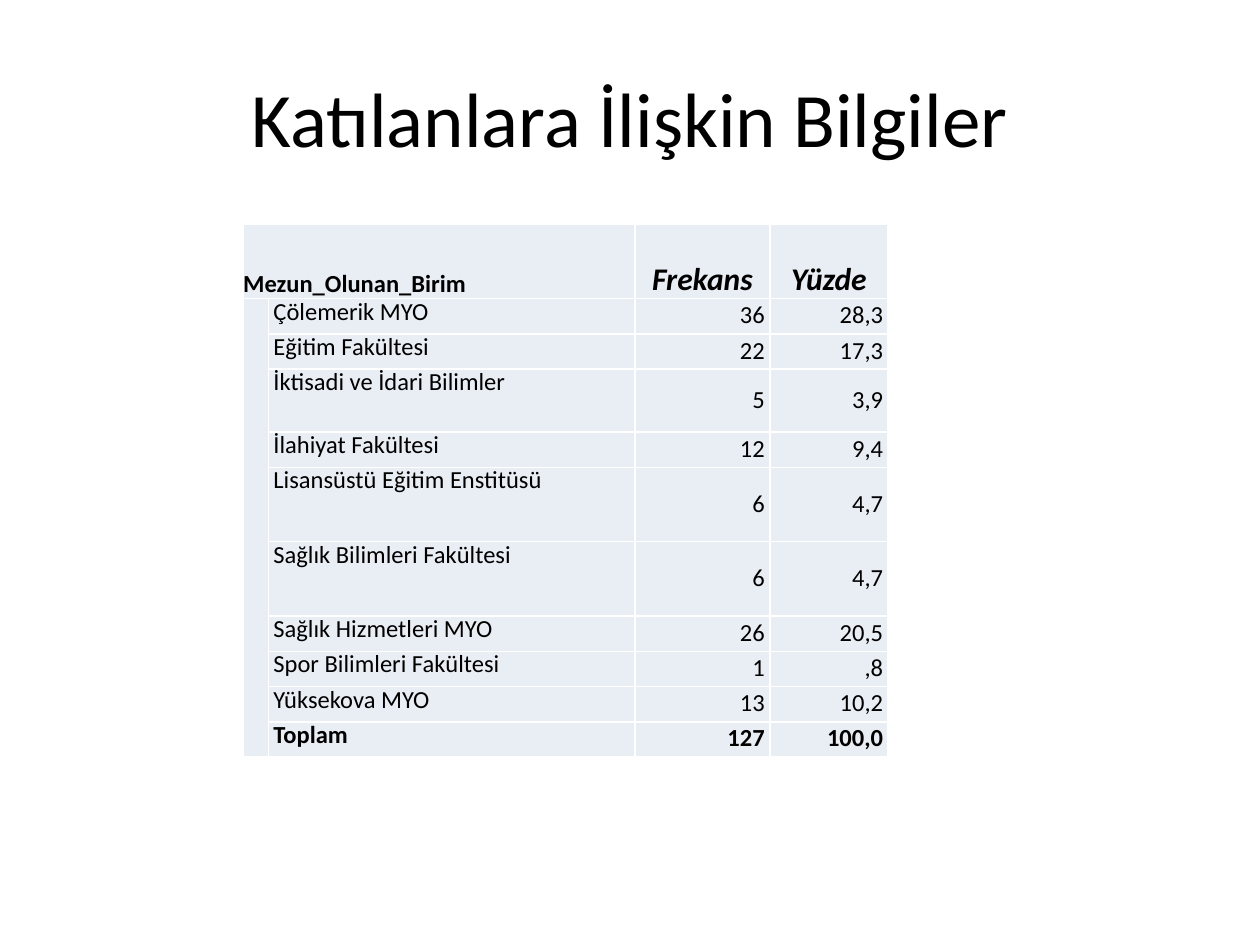
from pptx import Presentation
from pptx.dml.color import RGBColor
from pptx.enum.text import MSO_ANCHOR, PP_ALIGN
from pptx.util import Inches, Pt

BLACK = RGBColor(0x00, 0x00, 0x00)
PALE_BLUE = RGBColor(0xE9, 0xED, 0xF4)
LEFT, CENTER, RIGHT = PP_ALIGN.LEFT, PP_ALIGN.CENTER, PP_ALIGN.RIGHT
TOP, MIDDLE, BOTTOM = MSO_ANCHOR.TOP, MSO_ANCHOR.MIDDLE, MSO_ANCHOR.BOTTOM

COL_WIDTHS = [0.2, 2.91, 1.07, 0.94]
HEADER_HEIGHT = 0.59
UNITS = [
    ("Çölemerik MYO", "36", "28,3", 0.28),
    ("Eğitim Fakültesi", "22", "17,3", 0.28),
    ("İktisadi ve İdari Bilimler", "5", "3,9", 0.5),
    ("İlahiyat Fakültesi", "12", "9,4", 0.28),
    ("Lisansüstü Eğitim Enstitüsü", "6", "4,7", 0.59),
    ("Sağlık Bilimleri Fakültesi", "6", "4,7", 0.59),
    ("Sağlık Hizmetleri MYO", "26", "20,5", 0.28),
    ("Spor Bilimleri Fakültesi", "1", ",8", 0.28),
    ("Yüksekova MYO", "13", "10,2", 0.28),
    ("Toplam", "127", "100,0", 0.28),
]


class SlideBuilder:
    """Hold the text style and the current slide, and add elements to it."""

    def __init__(self, slide, font="Calibri", color=BLACK, fill=PALE_BLUE):
        self.slide, self.font, self.color, self.fill = slide, font, color, fill

    def format_runs(self, p, size, bold=False, italic=False):
        for r in p.runs:
            r.font.name, r.font.size = self.font, Pt(size)
            r.font.bold, r.font.italic = bold, italic
            r.font.color.rgb = self.color

    def title(self, text, left, top, width, height):
        sp = self.slide.shapes.title
        sp.left, sp.top = Inches(left), Inches(top)
        sp.width, sp.height = Inches(width), Inches(height)
        tf = sp.text_frame
        tf.text = text
        tf.vertical_anchor = MIDDLE
        p = tf.paragraphs[0]
        p.alignment = CENTER
        self.format_runs(p, 44)

    def table(self, left, top, col_widths, row_heights):
        table = self.slide.shapes.add_table(
            len(row_heights), len(col_widths), Inches(left), Inches(top),
            Inches(sum(col_widths)), Inches(sum(row_heights))).table
        table.first_row = table.horz_banding = False
        for column, width in zip(table.columns, col_widths):
            column.width = Inches(width)
        for row, height in zip(table.rows, row_heights):
            row.height = Inches(height)
        for cell in table.iter_cells():
            self.cell(cell, "")
        return table

    def cell(self, cell, text, align=LEFT, anchor=TOP, size=14, bold=False,
             italic=False, spacing=Pt(16), indent=0.04):
        cell.fill.solid()
        cell.fill.fore_color.rgb = self.fill
        cell.margin_left = cell.margin_right = 0
        cell.margin_top = cell.margin_bottom = 0
        cell.vertical_anchor = anchor
        cell.text_frame.text = text
        p = cell.text_frame.paragraphs[0]
        p.alignment, p.line_spacing = align, spacing
        pPr = p._p.get_or_add_pPr()
        for side in ("marL", "marR"):
            pPr.set(side, str(Inches(indent)))
        self.format_runs(p, size, bold, italic)


def main():
    prs = Presentation()
    prs.slide_width, prs.slide_height = Inches(10), Inches(7.5)
    s = SlideBuilder(prs.slides.add_slide(prs.slide_layouts[5]))
    s.title("Katılanlara İlişkin Bilgiler", 0.5, 0.3, 9, 1.25)

    heights = [HEADER_HEIGHT] + [unit[-1] for unit in UNITS]
    table = s.table(1.93, 1.78, COL_WIDTHS, heights)
    table.cell(0, 0).merge(table.cell(0, 1))
    table.cell(1, 0).merge(table.cell(len(UNITS), 0))

    s.cell(table.cell(0, 0), "Mezun_Olunan_Birim", anchor=BOTTOM, bold=True,
           spacing=1.15, indent=0)
    for col, heading in enumerate(("Frekans", "Yüzde"), start=2):
        s.cell(table.cell(0, col), heading, CENTER, BOTTOM, 18, True, True)
    for row, (name, count, percent, _) in enumerate(UNITS, start=1):
        bold = row == len(UNITS)
        s.cell(table.cell(row, 1), name, bold=bold)
        for col, value in enumerate((count, percent), start=2):
            s.cell(table.cell(row, col), value, RIGHT, MIDDLE, bold=bold)
    prs.save("out.pptx")


if __name__ == "__main__":
    main()
